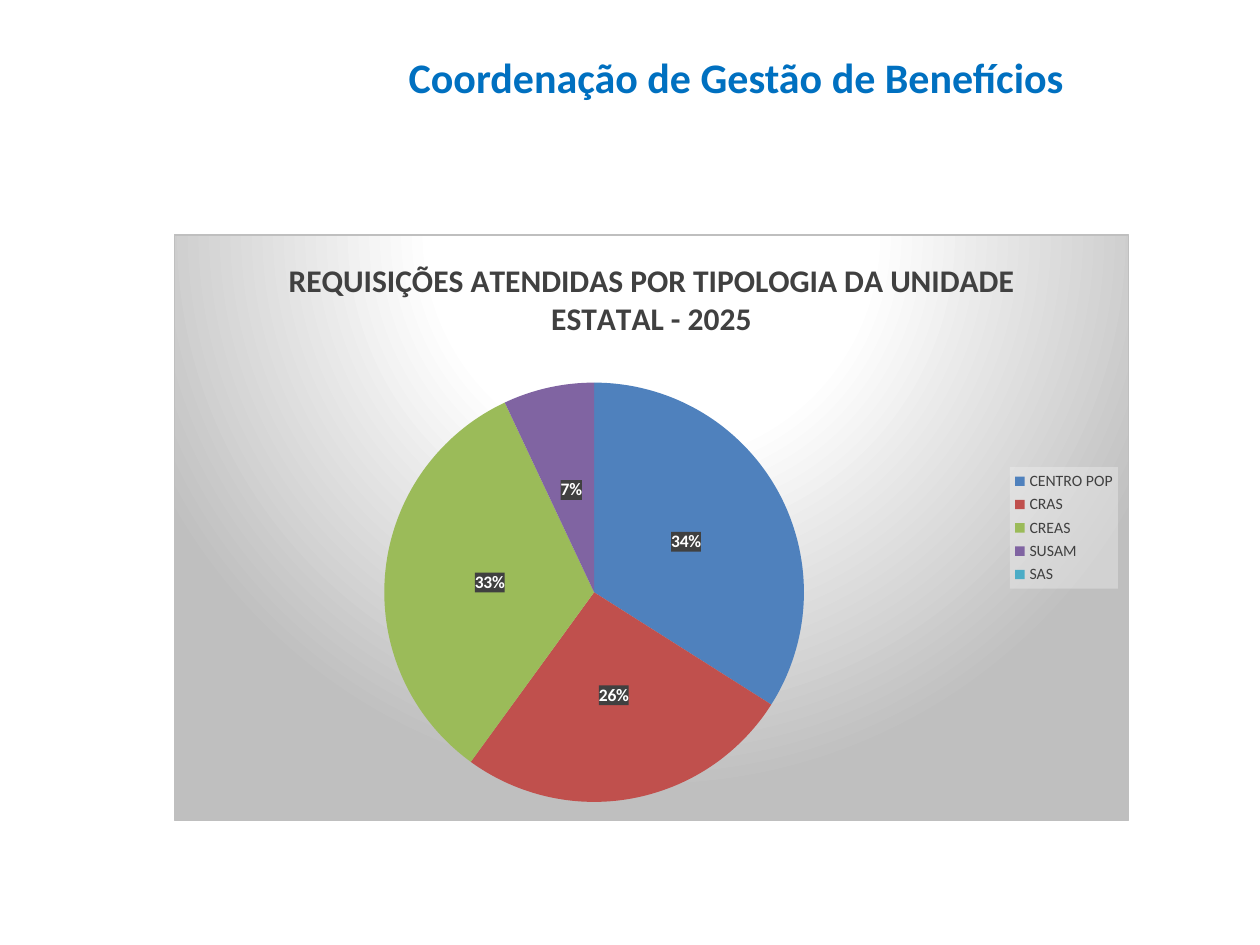
from dataclasses import dataclass

from lxml import etree
from pptx import Presentation
from pptx.chart.data import CategoryChartData
from pptx.dml.color import RGBColor
from pptx.enum.chart import XL_CHART_TYPE, XL_LABEL_POSITION, XL_LEGEND_POSITION
from pptx.enum.text import PP_ALIGN
from pptx.oxml import parse_xml
from pptx.oxml.ns import nsdecls, qn
from pptx.util import Inches, Pt

PIE = XL_CHART_TYPE.PIE
CENTER = XL_LABEL_POSITION.CENTER
LEGEND_RIGHT = XL_LEGEND_POSITION.RIGHT
ALIGN_RIGHT = PP_ALIGN.RIGHT


@dataclass(frozen=True)
class Theme:
    font: str = "Calibri"
    heading: str = "0070C0"
    dark: str = "404040"
    white: str = "FFFFFF"
    gray: str = "BFBFBF"
    pale: str = "F2F2F2"
    slices: tuple = ("4F81BD", "C0504D", "9BBB59", "8064A2", "4BACC6")
    heading_size: int = 24
    title_size: int = 18
    label_size: int = 10
    legend_size: int = 9


THEME = Theme()
REQUESTS = {"CENTRO POP": 34, "CRAS": 26, "CREAS": 33, "SUSAM": 7, "SAS": 0}


def style_font(font, size, color, bold=False):
    font.name = THEME.font
    font.size = Pt(size)
    font.bold = bold
    font.color.rgb = RGBColor.from_string(color)


def add_shape_properties(element, content):
    """Give a chart part its fill and line; they belong just before its text properties."""
    properties = parse_xml(f"<c:spPr {nsdecls('c', 'a')}>{content}</c:spPr>")
    element.find(qn("c:txPr")).addprevious(properties)


def translucent_fill(color, percent):
    return (f'<a:solidFill><a:srgbClr val="{color}">'
            f'<a:alpha val="{percent * 1000}"/></a:srgbClr></a:solidFill>')


def chart_background():
    stops = ((0, THEME.white), (39, THEME.white), (100, THEME.gray))
    stop_list = "".join(
        f'<a:gs pos="{position * 1000}"><a:srgbClr val="{color}"/></a:gs>'
        for position, color in stops)
    return (f'<a:gradFill><a:gsLst>{stop_list}</a:gsLst><a:path path="circle">'
            '<a:fillToRect l="50000" t="-80000" r="50000" b="180000"/></a:path></a:gradFill>'
            f'<a:ln w="{Pt(0.75)}"><a:solidFill><a:srgbClr val="{THEME.gray}"/>'
            '</a:solidFill></a:ln>')


def place_plot(chart, **fractions):
    """Fix the plot area as fractions of the chart: x, y, w and h."""
    plot_area = chart.plots[0]._element.getparent()
    for old_layout in plot_area.findall(qn("c:layout")):
        plot_area.remove(old_layout)
    layout = etree.Element(qn("c:layout"))
    manual = etree.SubElement(layout, qn("c:manualLayout"))
    settings = {"layoutTarget": "inner", "xMode": "edge", "yMode": "edge", **fractions}
    for name, value in settings.items():
        etree.SubElement(manual, qn(f"c:{name}")).set("val", str(value))
    plot_area.insert(0, layout)


def add_heading(page, left, top, width, height):
    box = page.shapes.add_textbox(left, top, width, height)
    frame = box.text_frame
    frame.word_wrap = True
    frame.text = "Coordenação de Gestão de Benefícios"
    para = frame.paragraphs[0]
    para.alignment = ALIGN_RIGHT
    style_font(para.runs[0].font, THEME.heading_size, THEME.heading, bold=True)


def style_labels(series):
    labels = series.data_labels
    labels.show_value = False
    labels.show_percentage = True
    labels.number_format = "0%"
    labels.number_format_is_linked = False
    labels.position = CENTER
    style_font(labels.font, THEME.label_size, THEME.white, bold=True)
    add_shape_properties(labels._element, translucent_fill(THEME.dark, 90))
    for index, value in enumerate(series.values):
        if not value:
            hidden = parse_xml(f'<c:dLbl {nsdecls("c")}><c:idx val="{index}"/>'
                               '<c:delete val="1"/></c:dLbl>')
            labels._element.insert(0, hidden)


def add_request_chart(page, left, top, width, height):
    data = CategoryChartData()
    data.categories = list(REQUESTS)
    data.add_series("Series 1", list(REQUESTS.values()))
    chart = page.shapes.add_chart(PIE, left, top, width, height, data).chart
    style_font(chart.font, THEME.label_size, "000000")
    add_shape_properties(chart._chartSpace, chart_background())

    chart.has_title = True
    title = chart.chart_title.text_frame
    title.text = "REQUISIÇÕES ATENDIDAS POR TIPOLOGIA DA UNIDADE ESTATAL - 2025"
    style_font(title.paragraphs[0].runs[0].font, THEME.title_size, THEME.dark, bold=True)

    chart.has_legend = True
    legend = chart.legend
    legend.position = LEGEND_RIGHT
    legend.include_in_layout = False
    style_font(legend.font, THEME.legend_size, THEME.dark)
    add_shape_properties(legend._element, translucent_fill(THEME.pale, 39))

    plot = chart.plots[0]
    plot.vary_by_categories = True
    series = plot.series[0]
    for index, color in enumerate(THEME.slices):
        fill = series.points[index].format.fill
        fill.solid()
        fill.fore_color.rgb = RGBColor.from_string(color)
    style_labels(series)
    place_plot(chart, x=0.22, y=0.25, w=0.44, h=0.72)


def main():
    deck = Presentation()
    deck.slide_width, deck.slide_height = Inches(10), Inches(7.5)
    page = deck.slides.add_slide(deck.slide_layouts[6])
    add_heading(page, Inches(3.11), Inches(0.36), Inches(5.43), Inches(0.55))
    add_request_chart(page, Inches(1.38), Inches(1.86), Inches(7.58), Inches(4.66))
    deck.save("out.pptx")


if __name__ == "__main__":
    main()
